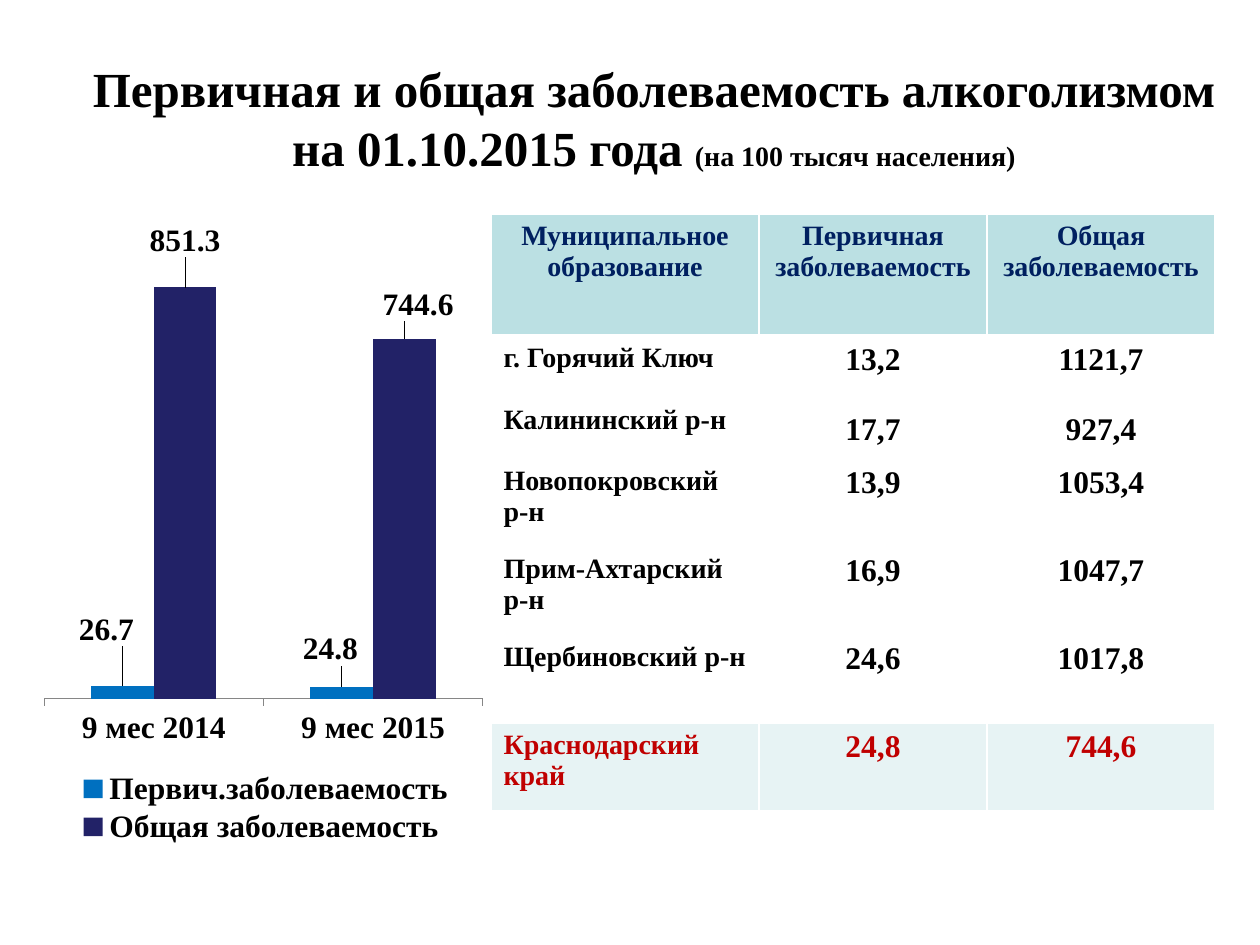
import pptx
import pptx.util
import pptx.chart.data
import pptx.dml.color
import pptx.enum.chart
import pptx.enum.text
import pptx.oxml
import pptx.oxml.ns

Pt = pptx.util.Pt
qn = pptx.oxml.ns.qn
PP_ALIGN = pptx.enum.text.PP_ALIGN
PX = 914400 / 126
FONT = "Times New Roman"
COLORS = {
    "text": "000000", "primary": "0070C0", "total": "222267",
    "head": "BBE0E3", "head_text": "002060", "region": "E7F3F4",
    "region_text": "C00000", "border": "FFFFFF", "axis": "868686",
}
CATEGORIES = ["9 мес 2014", "9 мес 2015"]
SERIES = [
    ("Первич.заболеваемость", (26.7, 24.8), "primary", [(-0.035, -0.055), (-0.025, -0.025)]),
    ("Общая заболеваемость", (851.3, 744.6), "total", [(0, -0.04), (0.03, -0.02)]),
]
HEAD = ["Муниципальное образование", "Первичная заболеваемость", "Общая заболеваемость"]
ROWS = [
    ("г. Горячий Ключ\nКалининский р-н", "13,2\n17,7", "1121,7\n927,4"),
    ("Новопокровский\nр-н", "13,9", "1053,4"),
    ("Прим-Ахтарский\nр-н", "16,9", "1047,7"),
    ("Щербиновский р-н", "24,6", "1017,8"),
    ("Краснодарский край", "24,8", "744,6"),
]


def px(*values):
    return [round(v * PX) for v in values]


def rgb(name):
    return pptx.dml.color.RGBColor.from_string(COLORS[name])


def style(font, size, color="text"):
    for key, value in {"name": FONT, "size": Pt(size), "bold": True}.items():
        setattr(font, key, value)
    font.color.rgb = rgb(color)


def chart_layout(x, y, w=None, h=None, inner=False):
    parts = [("layoutTarget", "inner")] if inner else []
    if w:
        parts += [("xMode", "edge"), ("yMode", "edge")]
    parts += [("x", x), ("y", y)]
    if w:
        parts += [("w", w), ("h", h)]
    body = "".join(f'<c:{tag} val="{value}"/>' for tag, value in parts)
    return pptx.oxml.parse_xml(
        f'<c:layout {pptx.oxml.ns.nsdecls("c")}><c:manualLayout>{body}</c:manualLayout></c:layout>')


def place(parent, index, layout):
    for old in parent.findall(qn("c:layout")):
        parent.remove(old)
    parent.insert(index, layout)


def add_title(s, x, y, w, h):
    tf = s.shapes.add_textbox(*px(x, y, w, h)).text_frame
    tf.word_wrap = True
    tf.vertical_anchor = pptx.enum.text.MSO_ANCHOR.MIDDLE
    p = tf.paragraphs[0]
    p.alignment = PP_ALIGN.CENTER
    for text, size in (("Первичная и общая заболеваемость алкоголизмом на 01.10.2015 года ", 28),
                       ("(на 100 тысяч населения)", 16)):
        r = p.add_run()
        r.text = text
        style(r.font, size)


def add_incidence_chart(s, x, y, w, h):
    data = pptx.chart.data.CategoryChartData()
    data.categories = CATEGORIES
    for name, values, _, _ in SERIES:
        data.add_series(name, values)
    kind = pptx.enum.chart.XL_CHART_TYPE.COLUMN_CLUSTERED
    chart = s.shapes.add_chart(kind, *px(x, y, w, h), data).chart
    style(chart.font, 18)
    chart.has_title = False
    chart.has_legend = True
    chart.legend.position = pptx.enum.chart.XL_LEGEND_POSITION.BOTTOM
    chart.legend.include_in_layout = False
    style(chart.legend.font, 18)
    place(chart.legend._element, 1, chart_layout(0.09, 0.87, 0.83, 0.13))

    value_axis = chart.value_axis
    for key, value in {"visible": False, "has_major_gridlines": False,
                       "minimum_scale": 0, "maximum_scale": 900}.items():
        setattr(value_axis, key, value)
    axis = chart.category_axis
    axis.major_tick_mark = pptx.enum.chart.XL_TICK_MARK.OUTSIDE
    axis.format.line.color.rgb = rgb("axis")
    style(axis.tick_labels.font, 18)

    plot = chart.plots[0]
    for key, value in {"gap_width": 150, "overlap": 0, "vary_by_categories": False}.items():
        setattr(plot, key, value)
    place(chart._chartSpace.chart.plotArea, 0, chart_layout(0.02, 0.053, 0.96, 0.705, inner=True))
    for series, (_, _, color, offsets) in zip(plot.series, SERIES):
        series.format.fill.solid()
        series.format.fill.fore_color.rgb = rgb(color)
        series.data_labels.show_value = True
        style(series.data_labels.font, 18)
        for i, offset in enumerate(offsets):
            label = series.points[i].data_label
            style(label.font, 18)
            label.position = pptx.enum.chart.XL_LABEL_POSITION.OUTSIDE_END
            place(label._dLbl, 1, chart_layout(*offset))


def set_borders(cell, bottom):
    tc_pr = cell._tc.get_or_add_tcPr()
    for i, (side, width) in enumerate((("L", 1), ("R", 1), ("T", 1), ("B", bottom))):
        tc_pr.insert(i, pptx.oxml.parse_xml(
            f'<a:ln{side} {pptx.oxml.ns.nsdecls("a")} w="{Pt(width)}"><a:solidFill>'
            f'<a:srgbClr val="{COLORS["border"]}"/></a:solidFill></a:ln{side}>'))


def fill_cell(cell, text, size, color, fill, centered, gap, bottom):
    set_borders(cell, bottom)
    if fill:
        cell.fill.solid()
        cell.fill.fore_color.rgb = rgb(fill)
    else:
        cell.fill.background()
    tf = cell.text_frame
    for i, line in enumerate(text.split("\n")):
        p = tf.add_paragraph() if i else tf.paragraphs[0]
        p.alignment = PP_ALIGN.CENTER if centered else PP_ALIGN.LEFT
        if i and gap:
            p.space_before = Pt(gap)
        r = p.add_run()
        r.text = line
        style(r.font, size, color)


def add_district_table(s, x, y, w, h):
    heights = [122, 122] + [(h - 244) // 4] * 4
    widths = [w - 456, 228, 228]
    table = s.shapes.add_table(len(heights), len(widths), *px(x, y, w, h)).table
    table.first_row = False
    table.horz_banding = False
    for row, height in zip(table.rows, px(*heights)):
        row.height = height
    for column, width in zip(table.columns, px(*widths)):
        column.width = width
    for i, row in enumerate([HEAD] + ROWS):
        color, fill = {0: ("head_text", "head"),
                       len(ROWS): ("region_text", "region")}.get(i, ("text", None))
        for j, text in enumerate(row):
            size = 18 if i and j else 16
            gap = size + 2 if i == 1 else 0
            fill_cell(table.cell(i, j), text, size, color, fill,
                      i == 0 or j > 0, gap, 1 if i else 3)


def main():
    prs = pptx.Presentation()
    prs.slide_width, prs.slide_height = px(1260, 945)
    s = prs.slides.add_slide(prs.slide_layouts[6])
    add_title(s, 63, 38, 1182, 158)
    add_incidence_chart(s, 35, 224, 457, 624)
    add_district_table(s, 491, 214, 724, 596)
    prs.save("out.pptx")


if __name__ == "__main__":
    main()
